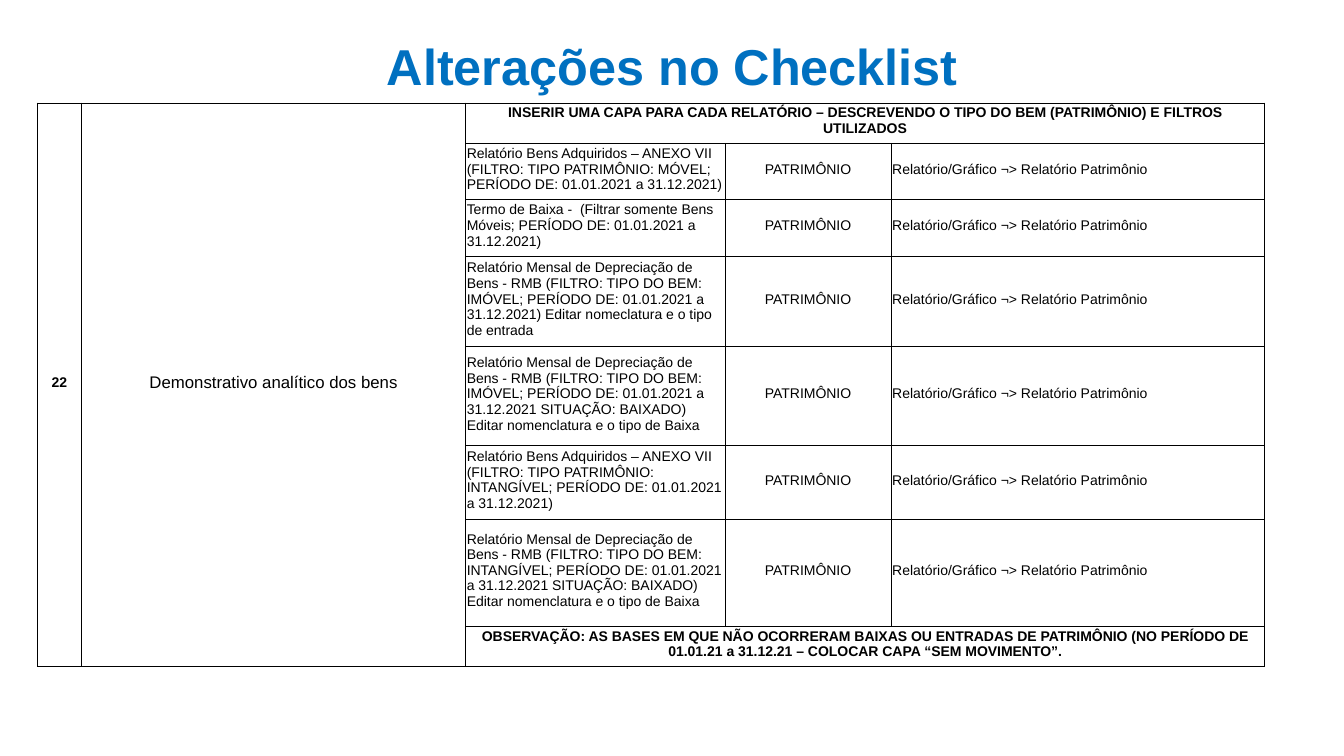
from lxml.etree import SubElement
from pptx import Presentation
from pptx.dml.color import RGBColor
from pptx.enum.text import MSO_ANCHOR as Anchor, PP_ALIGN as Align
from pptx.oxml.ns import qn
from pptx.util import Inches, Pt

FONT = "Arial"
BLACK = "000000"
BLUE = "0070C0"

COLUMN_WIDTHS = [0.44, 3.81, 2.57, 1.65, 3.7]
ROW_HEIGHTS = [0.4, 0.56, 0.56, 0.9, 0.98, 0.73, 1.06, 0.4]
COVER_NOTE = ("INSERIR UMA CAPA PARA CADA RELATÓRIO – DESCREVENDO O TIPO DO BEM "
              "(PATRIMÔNIO) E FILTROS UTILIZADOS")
REPORTS = [
    "Relatório Bens Adquiridos – ANEXO VII (FILTRO: TIPO PATRIMÔNIO: MÓVEL; "
    "PERÍODO DE: 01.01.2021 a 31.12.2021)",
    "Termo de Baixa -  (Filtrar somente Bens Móveis; PERÍODO DE: 01.01.2021 a 31.12.2021)",
    "Relatório Mensal de Depreciação de Bens - RMB (FILTRO: TIPO DO BEM: IMÓVEL; "
    "PERÍODO DE: 01.01.2021 a 31.12.2021) Editar nomeclatura e o tipo de entrada",
    "Relatório Mensal de Depreciação de Bens - RMB (FILTRO: TIPO DO BEM: IMÓVEL; "
    "PERÍODO DE: 01.01.2021 a 31.12.2021 SITUAÇÃO: BAIXADO) "
    "Editar nomenclatura e o tipo de Baixa",
    "Relatório Bens Adquiridos – ANEXO VII (FILTRO: TIPO PATRIMÔNIO: INTANGÍVEL; "
    "PERÍODO DE: 01.01.2021 a 31.12.2021)",
    "Relatório Mensal de Depreciação de Bens - RMB (FILTRO: TIPO DO BEM: INTANGÍVEL; "
    "PERÍODO DE: 01.01.2021 a 31.12.2021 SITUAÇÃO: BAIXADO) "
    "Editar nomenclatura e o tipo de Baixa",
]
MODULE = "PATRIMÔNIO"
MENU = "Relatório/Gráfico ¬> Relatório Patrimônio"
REMARK = ("OBSERVAÇÃO: AS BASES EM QUE NÃO OCORRERAM BAIXAS OU ENTRADAS DE PATRIMÔNIO "
          "(NO PERÍODO DE 01.01.21 a 31.12.21 – COLOCAR CAPA “SEM MOVIMENTO”.")


def write(frame, text, size, color=BLACK, bold=False, align=Align.CENTER):
    frame.text = text
    paragraph = frame.paragraphs[0]
    paragraph.alignment = align
    font = paragraph.runs[0].font
    font.name, font.size, font.bold = FONT, Pt(size), bold
    font.color.rgb = RGBColor.from_string(color)


def add_title(slide, text):
    title = slide.shapes.title
    title.left, title.top = Inches(0.67), Inches(0.21)
    title.width, title.height = Inches(12), Inches(0.74)
    frame = title.text_frame
    frame.vertical_anchor = Anchor.BOTTOM
    frame.margin_top = frame.margin_bottom = 0
    write(frame, text, 36, BLUE, bold=True)


def format_cell(cell):
    cell.fill.background()
    cell.vertical_anchor = Anchor.MIDDLE
    cell.margin_left = cell.margin_top = cell.margin_right = Inches(0.01)
    cell.margin_bottom = Inches(0.05)
    properties = cell._tc.get_or_add_tcPr()
    for position, side in enumerate(("lnL", "lnR", "lnT", "lnB")):
        border = SubElement(properties, qn(f"a:{side}"), w=str(Pt(0.5)))
        fill = SubElement(border, qn("a:solidFill"))
        SubElement(fill, qn("a:srgbClr"), val=BLACK)
        properties.insert(position, border)


def add_checklist(slide):
    table = slide.shapes.add_table(
        len(ROW_HEIGHTS), len(COLUMN_WIDTHS), Inches(0.37), Inches(1.02),
        Inches(sum(COLUMN_WIDTHS)), Inches(sum(ROW_HEIGHTS))).table
    table.first_row = table.horz_banding = False
    for column, width in zip(table.columns, COLUMN_WIDTHS):
        column.width = Inches(width)
    for row, height in zip(table.rows, ROW_HEIGHTS):
        row.height = Inches(height)
    for cell in table.iter_cells():
        format_cell(cell)

    last_row = len(ROW_HEIGHTS) - 1
    for column, text, size, bold in ((0, "22", 10, True),
                                     (1, "Demonstrativo analítico dos bens", 12, False)):
        item = table.cell(0, column)
        item.merge(table.cell(last_row, column))
        write(item.text_frame, text, size, bold=bold)
    for row, text in ((0, COVER_NOTE), (last_row, REMARK)):
        note = table.cell(row, 2)
        note.merge(table.cell(row, 4))
        write(note.text_frame, text, 10, bold=True)
    for row, report in enumerate(REPORTS, start=1):
        write(table.cell(row, 2).text_frame, report, 10, align=Align.LEFT)
        write(table.cell(row, 3).text_frame, MODULE, 10)
        write(table.cell(row, 4).text_frame, MENU, 10, align=Align.LEFT)


def main():
    deck = Presentation()
    deck.slide_width, deck.slide_height = Inches(13.33), Inches(7.5)
    slide = deck.slides.add_slide(deck.slide_layouts[5])
    add_title(slide, "Alterações no Checklist")
    add_checklist(slide)
    deck.save("out.pptx")


if __name__ == "__main__":
    main()
